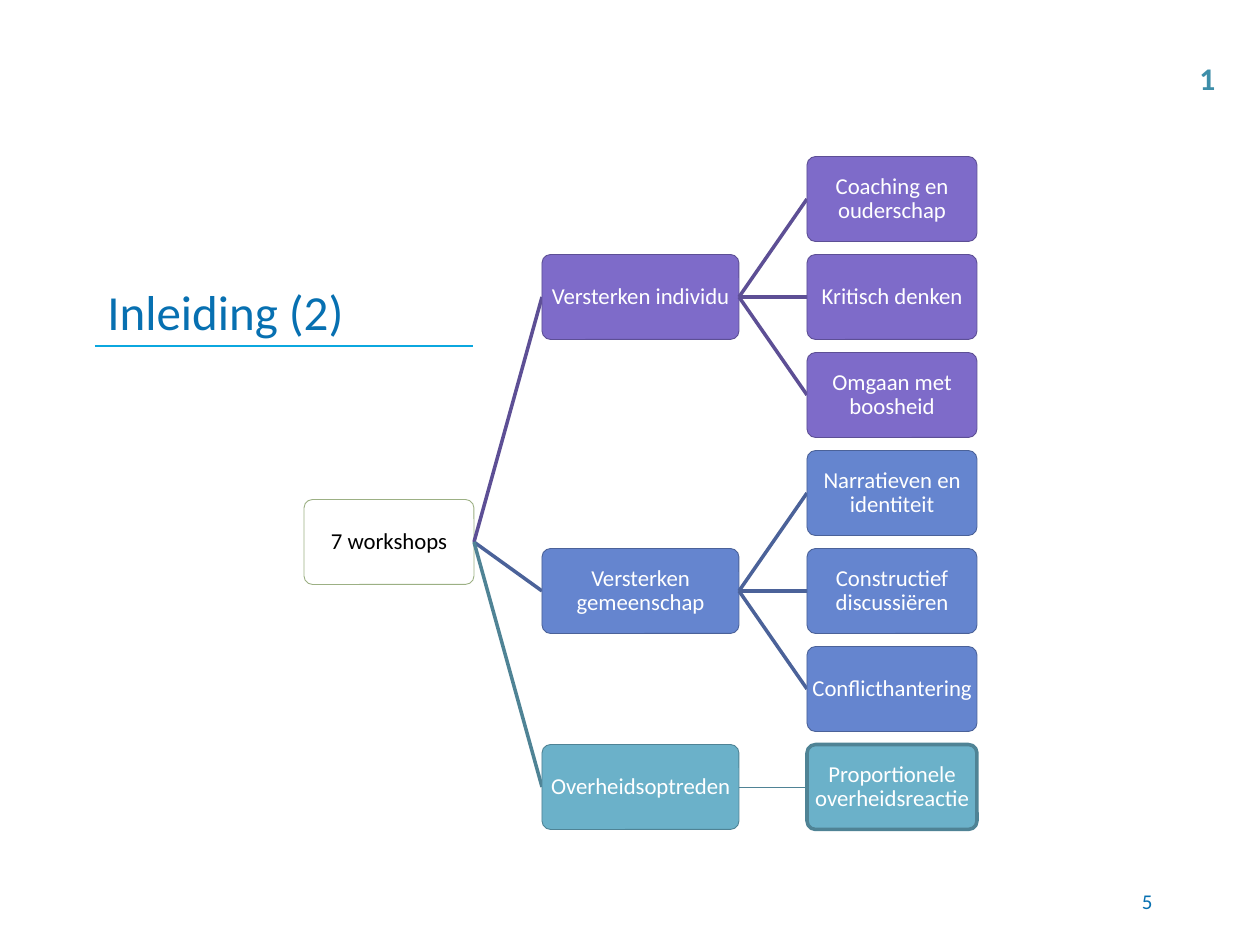
from dataclasses import dataclass

from pptx import Presentation
from pptx.dml.color import RGBColor
from pptx.enum.shapes import MSO_CONNECTOR, MSO_SHAPE
from pptx.enum.text import MSO_ANCHOR, PP_ALIGN
from pptx.oxml.ns import qn
from pptx.util import Pt
from lxml.etree import SubElement

TITLE = "Inleiding (2)"
PAGE_NUMBER = "5"
CORNER_NUMBER = "1"
ROOT = "7 workshops"
BRANCHES = [
    ("Versterken individu", "violet",
     ["Coaching en ouderschap", "Kritisch denken", "Omgaan met boosheid"]),
    ("Versterken gemeenschap", "blue",
     ["Narratieven en identiteit", "Constructief discussiëren", "Conflicthantering"]),
    ("Overheidsoptreden", "teal", ["Proportionele overheidsreactie"]),
]


@dataclass(frozen=True)
class Theme:
    font = "Calibri"
    heading = "0770B1"
    rule = "0BA7DF"
    corner = "3E8EA9"
    light = "FFFFFF"
    dark = "000000"
    root = ("FFFFFF", "9CB084")
    violet = ("7E6BC9", "5D4F95")
    blue = ("6585CF", "4B6299")
    teal = ("6BB1C9", "4F8395")
    title_size = 28
    corner_size = 18
    node_size = 13
    page_size = 12
    thin = 0.5
    rule_width = 0.75
    thick = 2


THEME = Theme()
PX_PER_INCH = 126
SLIDE_W, SLIDE_H = 1260, 945
ROOT_X, BRANCH_X, LEAF_X = 304, 542, 807
NODE_W, BRANCH_W, NODE_H = 170, 197, 85
FIRST_LEAF_MIDDLE, LEAF_STEP = 199, 98
NODE_INSET = 1


def px(length):
    return round(length * 914400 / PX_PER_INCH)


def colour(code):
    return RGBColor.from_string(code)


def write(frame, words, size, ink, anchor, align=PP_ALIGN.LEFT, bold=False, wrap=True):
    frame.word_wrap = wrap
    frame.vertical_anchor = anchor
    paragraph = frame.paragraphs[0]
    paragraph.alignment = align
    run = paragraph.add_run()
    run.text = words
    for key, value in {"name": THEME.font, "size": Pt(size), "bold": bold}.items():
        setattr(run.font, key, value)
    run.font.color.rgb = colour(ink)
    return paragraph


def add_label(slide, box, *args, **options):
    label = slide.shapes.add_textbox(*map(px, box))
    write(label.text_frame, *args, **options)


def add_line(slide, start, end, ink, width):
    line = slide.shapes.add_connector(MSO_CONNECTOR.STRAIGHT, *map(px, (*start, *end)))
    line.line.color.rgb = colour(ink)
    line.line.width = Pt(width)
    SubElement(line._element.spPr, qn("a:effectLst"))


def add_node(slide, words, x, middle, width, colours, ink=THEME.light, edge_width=THEME.thin):
    fill, edge = colours
    node = slide.shapes.add_shape(
        MSO_SHAPE.ROUNDED_RECTANGLE, *map(px, (x, middle - NODE_H / 2, width, NODE_H)))
    node.adjustments[0] = 0.1
    node.shadow.inherit = False
    node.fill.solid()
    node.fill.fore_color.rgb = colour(fill)
    node.line.color.rgb = colour(edge)
    node.line.width = Pt(edge_width)
    for side in ("left", "right", "top", "bottom"):
        setattr(node.text_frame, f"margin_{side}", px(NODE_INSET))
    paragraph = write(node.text_frame, words, THEME.node_size, ink,
                      MSO_ANCHOR.MIDDLE, PP_ALIGN.CENTER)
    paragraph.line_spacing = 0.9


def add_tree(slide):
    leaf_middle = FIRST_LEAF_MIDDLE
    placed = []
    for branch, hue, leaves in BRANCHES:
        middles = [leaf_middle + LEAF_STEP * i for i in range(len(leaves))]
        leaf_middle += LEAF_STEP * len(leaves)
        placed.append((branch, getattr(THEME, hue), sum(middles) / len(middles),
                       list(zip(leaves, middles))))

    root_middle = (placed[0][2] + placed[-1][2]) / 2
    add_node(slide, ROOT, ROOT_X, root_middle, NODE_W, THEME.root, THEME.dark)
    for branch, colours, middle, leaves in placed:
        edge = colours[1]
        leaf_line = THEME.thick if len(leaves) > 1 else THEME.thin
        leaf_edge = THEME.thin if len(leaves) > 1 else THEME.thick
        add_line(slide, (ROOT_X + NODE_W, root_middle), (BRANCH_X, middle), edge, THEME.thick)
        add_node(slide, branch, BRANCH_X, middle, BRANCH_W, colours)
        for leaf, height in leaves:
            add_line(slide, (BRANCH_X + BRANCH_W, middle), (LEAF_X, height), edge, leaf_line)
            add_node(slide, leaf, LEAF_X, height, NODE_W, colours, edge_width=leaf_edge)


def main():
    deck = Presentation()
    deck.slide_width, deck.slide_height = px(SLIDE_W), px(SLIDE_H)
    slide = deck.slides.add_slide(deck.slide_layouts[6])
    add_line(slide, (95, 346), (473, 346), THEME.rule, THEME.rule_width)
    add_label(slide, (95, 200, 383, 147), TITLE, THEME.title_size, THEME.heading,
              MSO_ANCHOR.BOTTOM)
    add_label(slide, (903, 876, 262, 50), PAGE_NUMBER, THEME.page_size, THEME.heading,
              MSO_ANCHOR.MIDDLE, PP_ALIGN.RIGHT)
    add_tree(slide)
    add_label(slide, (1187, 53, 42, 50), CORNER_NUMBER, THEME.corner_size, THEME.corner,
              MSO_ANCHOR.TOP, bold=True, wrap=False)
    deck.save("out.pptx")


if __name__ == "__main__":
    main()
